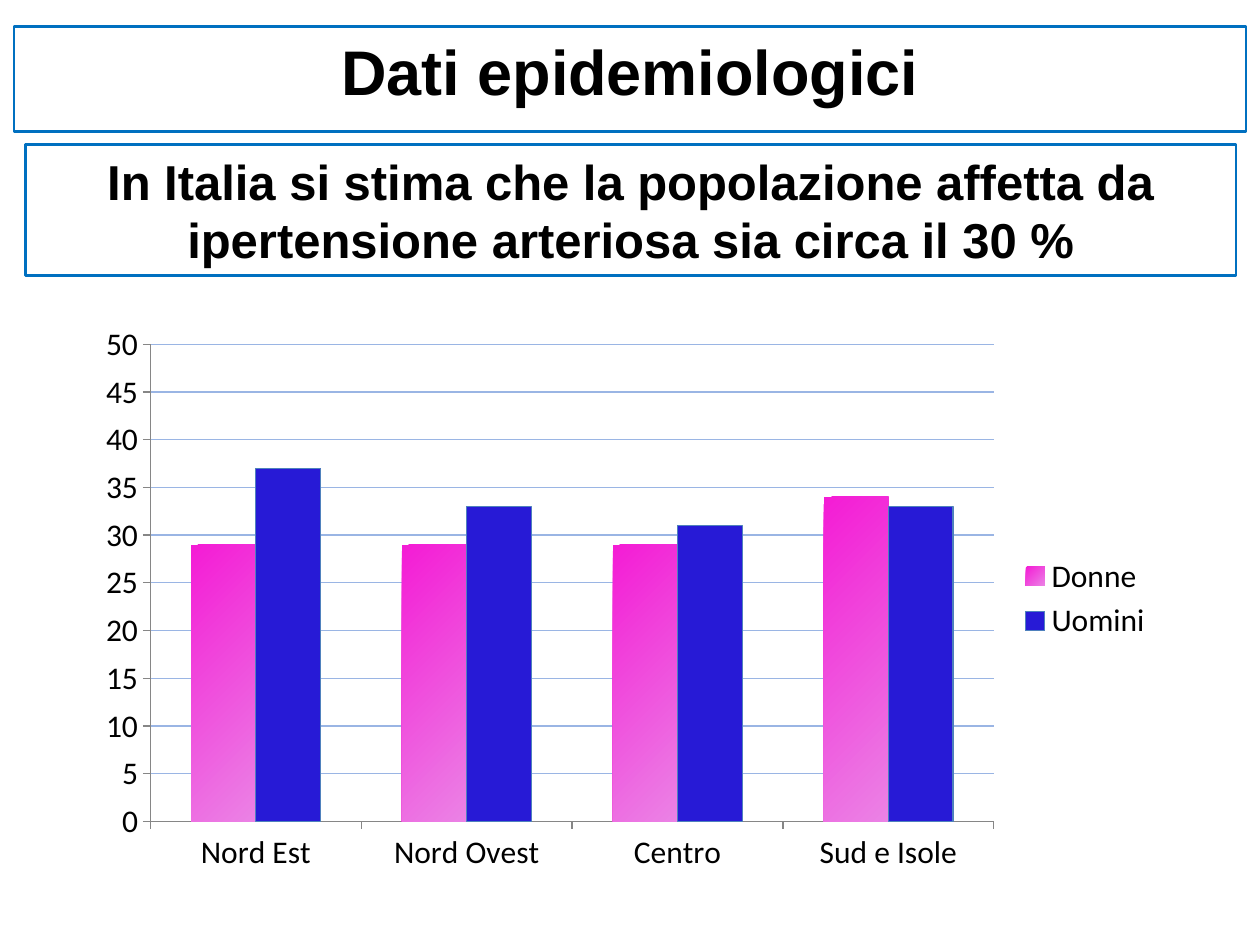
from pptx import Presentation
from pptx.chart.data import CategoryChartData
from pptx.dml.color import RGBColor
from pptx.enum.chart import XL_CHART_TYPE, XL_LEGEND_POSITION, XL_TICK_MARK
from pptx.enum.text import MSO_ANCHOR, MSO_AUTO_SIZE, PP_ALIGN
from pptx.util import Inches, Pt

THEME = {
    "text": RGBColor.from_string("000000"),
    "frame": RGBColor.from_string("0070C0"),
    "grid": RGBColor.from_string("9AB5E4"),
    "axis": RGBColor.from_string("868686"),
    "women": [RGBColor.from_string("F41CD5"), RGBColor.from_string("EB82E5")],
    "men": RGBColor.from_string("271AD6"),
    "men_edge": RGBColor.from_string("4F81BD"),
    "heading_font": "Arial",
    "chart_font": "Calibri",
    "title_size": Pt(36),
    "statement_size": Pt(28),
    "chart_size": Pt(18),
    "frame_width": Pt(1.5),
    "thin": Pt(0.75),
}

deck = Presentation()
deck.slide_width, deck.slide_height = Inches(10), Inches(7.5)
slide = deck.slides.add_slide(deck.slide_layouts[5])


def area(left, top, width, height):
    """Turn percentages of the slide into left, top, width and height."""
    return (int(deck.slide_width * left / 100), int(deck.slide_height * top / 100),
            int(deck.slide_width * width / 100), int(deck.slide_height * height / 100))


# Framed title and statement
title = slide.shapes.title
statement = slide.shapes.add_textbox(*area(2, 15.33, 96.1, 13.87))
title.left, title.top, title.width, title.height = area(1.1, 2.8, 97.8, 9.47)

for box, wording, size in (
    (title, "Dati epidemiologici", THEME["title_size"]),
    (statement, "In Italia si stima che la popolazione affetta da "
                "ipertensione arteriosa sia circa il 30 %", THEME["statement_size"]),
):
    box.line.color.rgb = THEME["frame"]
    box.line.width = THEME["frame_width"]
    frame = box.text_frame
    frame.text = wording
    frame.word_wrap = True
    frame.auto_size = MSO_AUTO_SIZE.SHAPE_TO_FIT_TEXT
    frame.vertical_anchor = MSO_ANCHOR.TOP
    paragraph = frame.paragraphs[0]
    paragraph.alignment = PP_ALIGN.CENTER
    font = paragraph.runs[0].font
    font.name, font.size, font.bold = THEME["heading_font"], size, True
    font.color.rgb = THEME["text"]

# Prevalence by area and sex
prevalence = CategoryChartData()
prevalence.categories = ["Nord Est", "Nord Ovest", "Centro", "Sud e Isole"]
prevalence.add_series("Donne", [29, 29, 29, 34])
prevalence.add_series("Uomini", [37, 33, 31, 33])
chart = slide.shapes.add_chart(
    XL_CHART_TYPE.COLUMN_CLUSTERED, *area(6.7, 33.2, 85.8, 60.27), prevalence).chart
chart.has_title = False
chart.font.name = THEME["chart_font"]
chart.font.size = THEME["chart_size"]
chart.font.color.rgb = THEME["text"]
chart.has_legend = True
chart.legend.position = XL_LEGEND_POSITION.RIGHT
chart.legend.include_in_layout = False

# Axes and gridlines
for axis in (chart.category_axis, chart.value_axis):
    axis.major_tick_mark = XL_TICK_MARK.OUTSIDE
    axis.minor_tick_mark = XL_TICK_MARK.NONE
    axis.format.line.color.rgb = THEME["axis"]
    axis.format.line.width = THEME["thin"]
percent = chart.value_axis
percent.minimum_scale, percent.maximum_scale, percent.major_unit = 0, 50, 5
percent.has_major_gridlines = True
percent.major_gridlines.format.line.color.rgb = THEME["grid"]
percent.major_gridlines.format.line.width = THEME["thin"]

# Columns
columns = chart.plots[0]
columns.gap_width = 126
columns.overlap = 0
columns.vary_by_categories = False
women, men = columns.series
women.format.fill.gradient()
women.format.fill.gradient_angle = 315
for stop, colour in zip(women.format.fill.gradient_stops, THEME["women"]):
    stop.color.rgb = colour
men.format.fill.solid()
men.format.fill.fore_color.rgb = THEME["men"]
men.format.line.color.rgb = THEME["men_edge"]
men.format.line.width = THEME["thin"]

deck.save("out.pptx")
